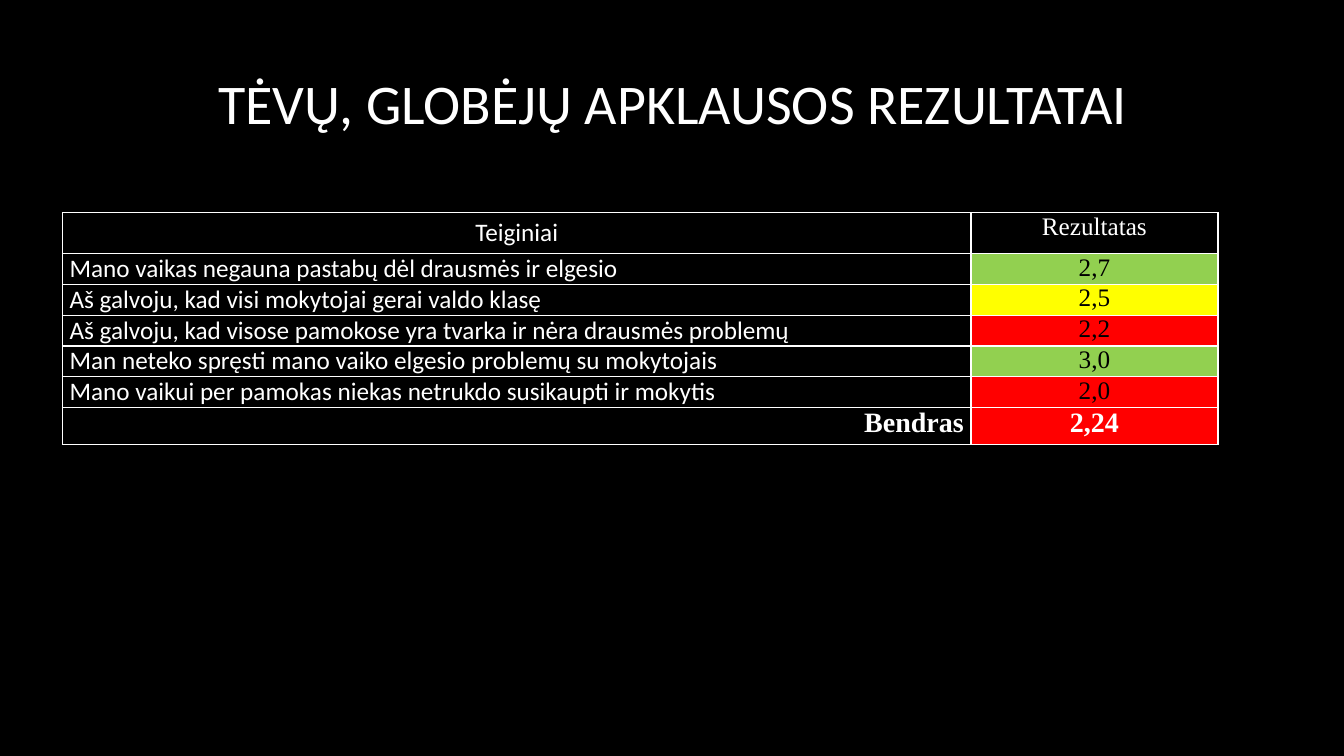
"""Build the parent survey results slide."""
from dataclasses import dataclass

from lxml import etree
from pptx import Presentation
from pptx import util as u
from pptx.dml.color import RGBColor
from pptx.enum import text
from pptx.oxml import ns

COLORS = {
    "black": "000000",
    "white": "FFFFFF",
    "good": "92D050",
    "fair": "FFFF00",
    "poor": "FF0000",
}
SANS, SERIF = "Calibri", "Times New Roman"
LEFT, CENTER, RIGHT = text.PP_ALIGN.LEFT, text.PP_ALIGN.CENTER, text.PP_ALIGN.RIGHT
TIGHT = {
    "margin_left": u.Inches(0.07),
    "margin_right": u.Inches(0.07),
    "margin_top": 0,
    "margin_bottom": 0,
}


@dataclass
class Entry:
    wording: str
    font: str = SANS
    align: text.PP_ALIGN = LEFT
    color: str = "white"
    fill: str = ""
    size: float = 18
    bold: bool = False
    tight: bool = True


@dataclass
class Statement:
    wording: str
    score: str
    rating: str

    def entries(self) -> list[Entry]:
        return [
            Entry(self.wording),
            Entry(self.score, SERIF, CENTER, "black", self.rating),
        ]


STATEMENTS = [
    Statement("Mano vaikas negauna pastabų dėl drausmės ir elgesio", "2,7", "good"),
    Statement("Aš galvoju, kad visi mokytojai gerai valdo klasę", "2,5", "fair"),
    Statement("Aš galvoju, kad visose pamokose yra tvarka ir nėra drausmės problemų", "2,2", "poor"),
    Statement("Man neteko spręsti mano vaiko elgesio problemų su mokytojais", "3,0", "good"),
    Statement("Mano vaikui per pamokas niekas netrukdo susikaupti ir mokytis", "2,0", "poor"),
]
HEADINGS = [
    Entry("Teiginiai", align=CENTER, tight=False),
    Entry("Rezultatas", SERIF, CENTER),
]
OVERALL = [
    Entry("Bendras", SERIF, RIGHT, size=20, bold=True),
    Entry("2,24", SERIF, CENTER, fill="poor", size=20, bold=True),
]
COLUMN_WIDTHS = [9.01, 2.45]
ROW_HEIGHTS = [0.4] + [0.3] * len(STATEMENTS) + [0.37]


def rgb(name: str) -> RGBColor:
    """Return the named colour."""
    return RGBColor.from_string(COLORS[name])


def apply(target, values: dict) -> None:
    """Set each format value on the target."""
    for name, value in values.items():
        setattr(target, name, value)


def write(frame, entry: Entry) -> None:
    """Put the formatted wording into a text frame."""
    frame.text = entry.wording
    line = frame.paragraphs[0]
    line.alignment = entry.align
    font = line.runs[0].font
    apply(font, {"name": entry.font, "size": u.Pt(entry.size), "bold": entry.bold})
    font.color.rgb = rgb(entry.color)


def add_borders(cell) -> None:
    """Draw a thin white line on every side of a cell."""
    properties = cell._tc.get_or_add_tcPr()
    for position, side in enumerate(("lnL", "lnR", "lnT", "lnB")):
        border = etree.Element(ns.qn(f"a:{side}"), w=str(u.Pt(1)))
        fill = etree.SubElement(border, ns.qn("a:solidFill"))
        etree.SubElement(fill, ns.qn("a:srgbClr"), val=COLORS["white"])
        properties.insert(position, border)


def fill_cell(cell, entry: Entry) -> None:
    """Write and format one table cell."""
    if entry.tight:
        apply(cell, TIGHT)
    write(cell.text_frame, entry)
    if entry.fill:
        cell.fill.solid()
        cell.fill.fore_color.rgb = rgb(entry.fill)
    else:
        cell.fill.background()
    add_borders(cell)


def add_title(slide) -> None:
    """Place and format the slide title."""
    title = slide.shapes.title
    apply(title, {
        "left": u.Inches(0.8),
        "top": u.Inches(0.52),
        "width": u.Inches(11.74),
        "height": u.Inches(0.99),
    })
    write(title.text_frame, Entry("TĖVŲ, GLOBĖJŲ APKLAUSOS REZULTATAI", align=CENTER, size=40))
    title.text_frame.vertical_anchor = text.MSO_ANCHOR.MIDDLE


def add_results(slide) -> None:
    """Add the table of statements and scores."""
    rows = [HEADINGS, *(statement.entries() for statement in STATEMENTS), OVERALL]
    results = slide.shapes.add_table(
        len(rows), len(COLUMN_WIDTHS), u.Inches(0.62), u.Inches(2.11),
        u.Inches(sum(COLUMN_WIDTHS)), u.Inches(sum(ROW_HEIGHTS)),
    ).table
    apply(results, {"first_row": False, "horz_banding": False})
    for column, width in zip(results.columns, COLUMN_WIDTHS):
        column.width = u.Inches(width)
    for row, height, entries in zip(results.rows, ROW_HEIGHTS, rows):
        row.height = u.Inches(height)
        for cell, entry in zip(row.cells, entries):
            fill_cell(cell, entry)


def main() -> None:
    """Create and save the presentation."""
    deck = Presentation()
    apply(deck, {"slide_width": u.Inches(13.33), "slide_height": u.Inches(7.5)})
    slide = deck.slides.add_slide(deck.slide_layouts[5])
    slide.background.fill.solid()
    slide.background.fill.fore_color.rgb = rgb("black")
    add_title(slide)
    add_results(slide)
    deck.save("out.pptx")


if __name__ == "__main__":
    main()
